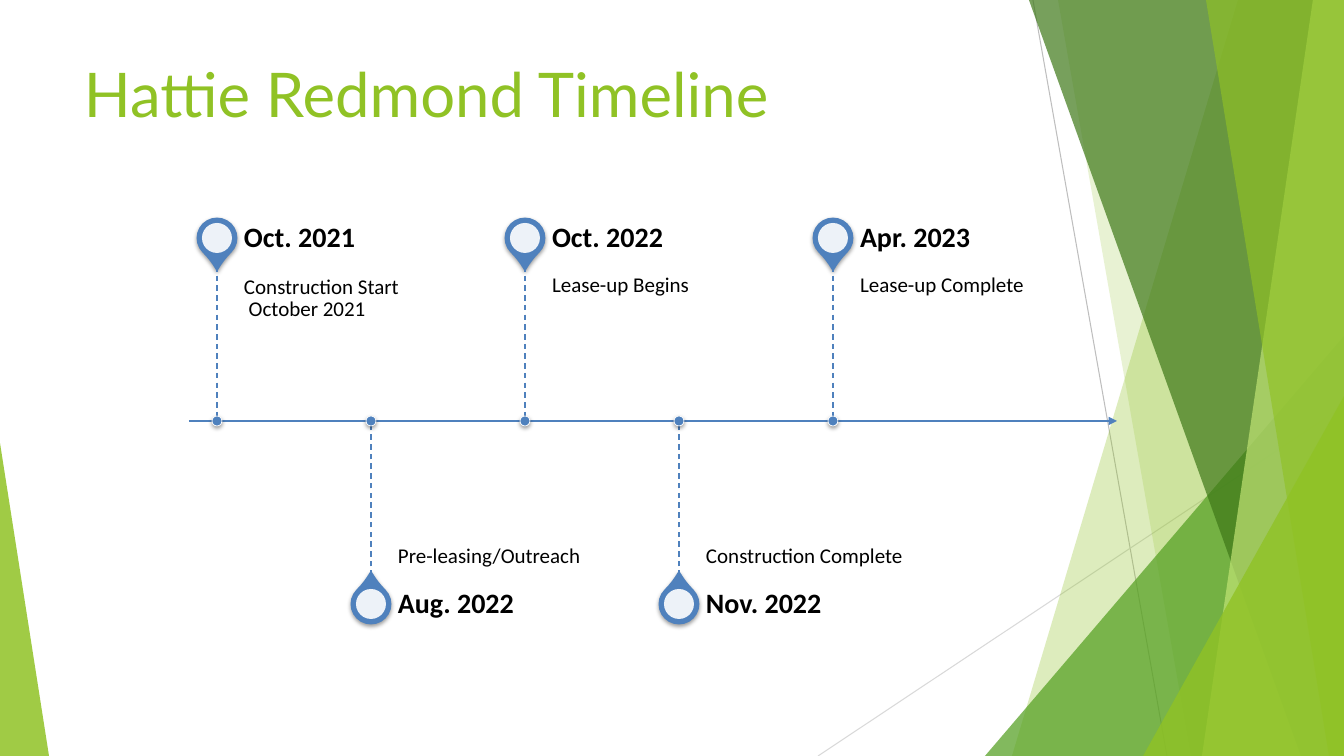
from collections import namedtuple

from lxml import etree
from pptx import Presentation
from pptx import util as u
from pptx.dml.color import RGBColor
from pptx.enum import dml, shapes, text
from pptx.oxml import ns

Box = namedtuple("Box", "left top width height")
Theme = namedtuple(
    "Theme", "lime green forest pale steel white black hairline mist "
    "heading_font body_font heading_size date_size event_size")

THEME = Theme(
    lime="90C225", green="539F20", forest="3E7818", pale="C0E374",
    steel="4F81BD", white="FFFFFF", black="000000", hairline="BEBEBE", mist="D9D9D9",
    heading_font="Lato", body_font="Calibri",
    heading_size=44, date_size=20, event_size=15)
EMU_PER_PX = 914400 / 100.8
SLIDE = Box(0, 0, 1344, 756)
MILESTONES = [
    ("Oct. 2021", "Construction Start\v October 2021"),
    ("Aug. 2022", "Pre-leasing/Outreach"),
    ("Oct. 2022", "Lease-up Begins"),
    ("Nov. 2022", "Construction Complete"),
    ("Apr. 2023", "Lease-up Complete"),
]


def px(*lengths):
    """Turn pixel lengths into EMU."""
    return [u.Emu(round(length * EMU_PER_PX)) for length in lengths]


def assign(target, values):
    """Set each format value on the target."""
    for key, value in values.items():
        setattr(target, key, value)


def add_xml(parent, tag, **attributes):
    """Append a drawing element and return it."""
    return etree.SubElement(parent, ns.qn(tag), attributes)


def paint(shape, color, opacity=100, outline=None, weight=0):
    """Give a shape its fill and outline, without a shadow."""
    shape.shadow.inherit = False
    shape.fill.solid()
    shape.fill.fore_color.rgb = RGBColor.from_string(color)
    if opacity < 100:
        tint = shape._element.spPr.find(".//" + ns.qn("a:srgbClr"))
        add_xml(tint, "a:alpha", val=str(opacity * 1000))
    if outline:
        shape.line.color.rgb = RGBColor.from_string(outline)
        shape.line.width = u.Pt(weight)
    else:
        shape.line.fill.background()


def cast_shadow(shape):
    """Add a soft shadow below a shape."""
    effects = shape._element.spPr.find(ns.qn("a:effectLst"))
    shadow = add_xml(effects, "a:outerShdw", blurRad=str(u.Pt(3.1)), dist=str(u.Pt(1.6)),
                     dir="5400000", rotWithShape="0")
    tint = add_xml(shadow, "a:srgbClr", val=THEME.black)
    add_xml(tint, "a:alpha", val="38000")


def add_line(slide, start, end, color, weight, dash=None, arrow=False):
    """Draw a straight line, dashed or with an arrowhead if asked."""
    line = slide.shapes.add_connector(shapes.MSO_CONNECTOR.STRAIGHT, *px(*start, *end))
    line.line.color.rgb = RGBColor.from_string(color)
    assign(line.line, {"width": u.Pt(weight), "dash_style": dash})
    if arrow:
        add_xml(line.line._get_or_add_ln(), "a:tailEnd", type="triangle")
    add_xml(line._element.spPr, "a:effectLst")


def add_disc(slide, x, y, size, preset=shapes.MSO_SHAPE.OVAL):
    """Add a round shape centred on a point."""
    return slide.shapes.add_shape(preset, *px(x - size / 2, y - size / 2, size, size))


def add_text(slide, box, words, color, font, size, bold=False, spacing=1.0,
             anchor=text.MSO_ANCHOR.TOP, margins=(0, 0, 0, 0)):
    """Write one paragraph in a box."""
    frame = slide.shapes.add_textbox(*px(*box)).text_frame
    sides = ("margin_left", "margin_top", "margin_right", "margin_bottom")
    assign(frame, {"word_wrap": True, "vertical_anchor": anchor, **dict(zip(sides, px(*margins)))})
    paragraph = frame.paragraphs[0]
    assign(paragraph, {"text": words, "line_spacing": spacing})
    for run in paragraph.runs:
        assign(run.font, {"name": font, "size": u.Pt(size), "bold": bold})
        run.font.color.rgb = RGBColor.from_string(color)


def add_facets(slide, box):
    """Lay the translucent facets along both edges of the box."""
    right, bottom = box.left + box.width, box.top + box.height
    add_line(slide, (right - 311, box.top), (right - 177, bottom), THEME.hairline, 0.75)
    add_line(slide, (right, bottom - 350), (right - 526, bottom), THEME.mist, 0.75)
    facets = [
        (right, -106, 0, -332, THEME.lime, 30),
        (right, -286, 0, -153, THEME.lime, 20),
        (right, 0, 336, -359, THEME.green, 72),
        (right, -315, 0, -43, THEME.forest, 70),
        (right, -31, 0, -142, THEME.pale, 70),
        (right, -138, 0, -15, THEME.lime, 65),
        (right, 0, 396, -201, THEME.lime, 80),
        (box.left, 0, 443, 49, THEME.lime, 85),
    ]
    for edge, head, drop, foot, color, opacity in facets:
        top = box.top + drop
        outline = slide.shapes.build_freeform(edge, top, EMU_PER_PX)
        outline.add_line_segments([(edge + head, top), (edge + foot, bottom), (edge, bottom)])
        paint(outline.convert_to_shape(), color, opacity)


def add_milestone(slide, x, axis, date, event, above):
    """Place a pin, its texts, stem and dot above or below the axis."""
    side = -1 if above else 1
    pin_y, stem_end = axis + side * 183, axis + side * 155
    pin = add_disc(slide, x, pin_y, 38, shapes.MSO_SHAPE.TEAR)
    pin.adjustments[0] = 1.15
    pin.rotation = 135 if above else 315
    paint(pin, THEME.steel, outline=THEME.steel, weight=2)
    cast_shadow(pin)
    paint(add_disc(slide, x, pin_y, 30), THEME.white, 90)
    add_text(slide, Box(x + 27, min(axis, stem_end), 256, 155), event, THEME.black,
             THEME.body_font, THEME.event_size, spacing=0.9,
             anchor=text.MSO_ANCHOR.TOP if above else text.MSO_ANCHOR.BOTTOM,
             margins=(0, 10, 10, 16) if above else (0, 16, 0, 10))
    add_text(slide, Box(x + 27, pin_y - 27, 256, 54), date, THEME.black,
             THEME.body_font, THEME.date_size, bold=True, spacing=0.9,
             anchor=text.MSO_ANCHOR.MIDDLE, margins=(0, 0, 14, 0))
    add_line(slide, (x, stem_end), (x, axis), THEME.steel, 1, dash=dml.MSO_LINE.DASH)
    dot = add_disc(slide, x, axis, 10)
    paint(dot, THEME.steel, outline=THEME.white, weight=0.5)
    cast_shadow(dot)


def add_timeline(slide, box):
    """Draw the axis through the box and alternate milestones along it."""
    axis = box.top + box.height // 2
    add_line(slide, (box.left, axis), (box.left + box.width, axis), THEME.steel, 1.5, arrow=True)
    pitch = box.width // (len(MILESTONES) + 1)
    for index, (date, event) in enumerate(MILESTONES):
        add_milestone(slide, box.left + 28 + index * pitch, axis, date, event, index % 2 == 0)


def main():
    """Build and save the timeline slide."""
    deck = Presentation()
    deck.slide_width, deck.slide_height = px(SLIDE.width, SLIDE.height)
    slide = deck.slides.add_slide(deck.slide_layouts[6])
    add_facets(slide, SLIDE)
    add_text(slide, Box(84, 56, 826, 77), "Hattie Redmond Timeline", THEME.lime,
             THEME.heading_font, THEME.heading_size)
    add_timeline(slide, Box(189, 211, 928, 420))
    deck.save("out.pptx")


if __name__ == "__main__":
    main()
